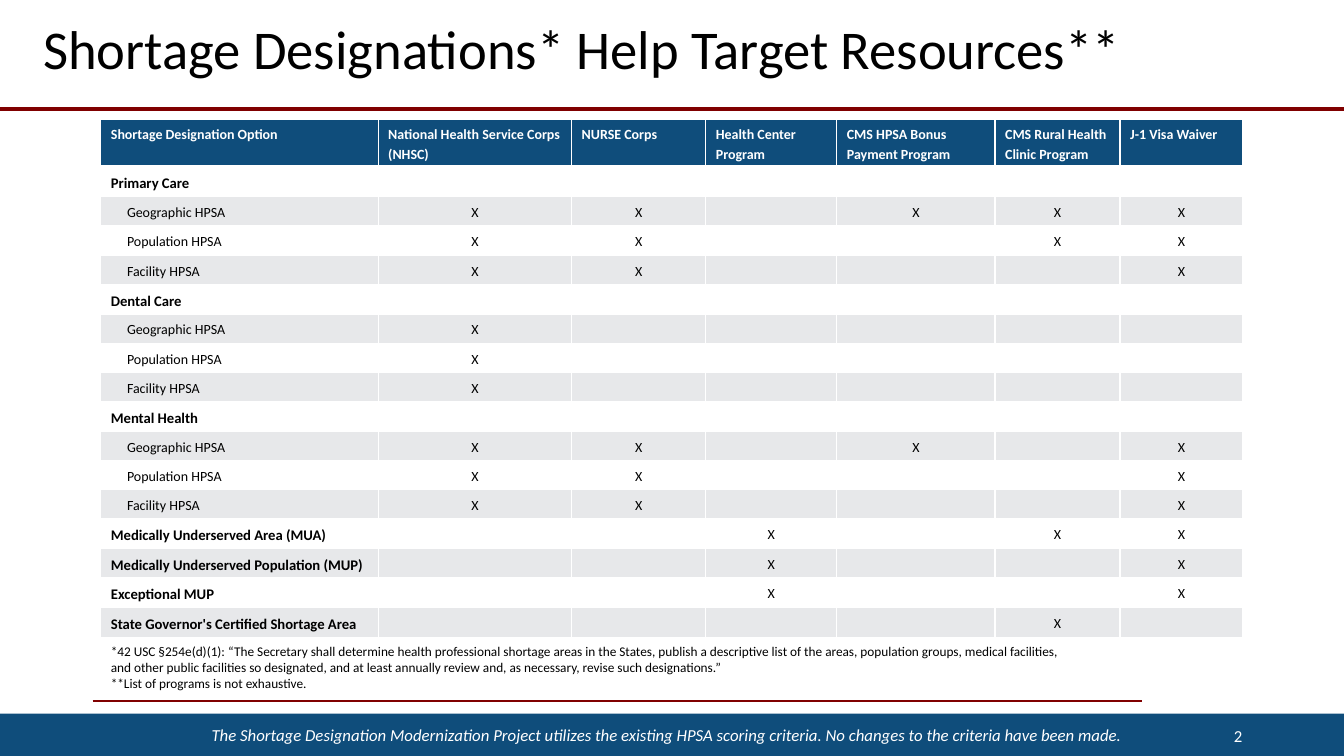
from typing import NamedTuple

from lxml import etree
from pptx import Presentation
from pptx.dml.color import RGBColor
from pptx.enum.shapes import MSO_CONNECTOR, MSO_SHAPE
from pptx.enum.text import MSO_ANCHOR, PP_ALIGN
from pptx.oxml.ns import qn
from pptx.util import Inches, Pt

RECT = MSO_SHAPE.RECTANGLE
LINE = MSO_CONNECTOR.STRAIGHT
TOP, MIDDLE = MSO_ANCHOR.TOP, MSO_ANCHOR.MIDDLE
LEFT, CENTER, RIGHT = PP_ALIGN.LEFT, PP_ALIGN.CENTER, PP_ALIGN.RIGHT

FONT = "Calibri"
NAVY, MAROON, GREY = "0F4D7B", "800000", "E7E8EA"
WHITE, BLACK = "FFFFFF", "000000"


class Rule(NamedTuple):
    left: float
    right: float
    top: float
    width: float


class Note(NamedTuple):
    left: float
    top: float
    width: float
    height: float
    lines: list[str]
    size: float
    color: str = BLACK
    italic: bool = False
    align: PP_ALIGN = LEFT
    anchor: MSO_ANCHOR = TOP
    space: float = 1.0


class Row(NamedTuple):
    label: str
    marks: str = ""
    bold: bool = True


RULES = [Rule(0.92, 11.33, 6.95, 1.5), Rule(0, 13.33, 1.08, 3)]

NOTES = [
    Note(1, 6.33, 9.75, 0.58, [
        "*42 USC §254e(d)(1): “The Secretary shall determine health professional "
        "shortage areas in the States, publish a descriptive list of the areas, "
        "population groups, medical facilities, and other public facilities so "
        "designated, and at least annually review and, as necessary, revise such "
        "designations.”",
        "**List of programs is not exhaustive.",
    ], 9.5),
    Note(0.33, 0.17, 11.83, 0.71,
         ["Shortage Designations* Help Target Resources**"],
         39, space=0.9),
    Note(2, 7.14, 9.33, 0.57, [
        "The Shortage Designation Modernization Project utilizes the existing HPSA "
        "scoring criteria. No changes to the criteria have been made.",
    ], 12, WHITE, italic=True),
    Note(9.42, 7.1, 3, 0.4, ["2"], 12, WHITE, align=RIGHT, anchor=MIDDLE),
]

HEADS = [
    "Shortage Designation Option", "National Health Service Corps (NHSC)",
    "NURSE Corps", "Health Center Program", "CMS HPSA Bonus Payment Program",
    "CMS Rural Health Clinic Program", "J-1 Visa Waiver",
]
WIDTHS = [2.75, 1.92, 1.33, 1.3, 1.57, 1.24, 1.22]
HEAD_H, ROW_H = 0.48, 0.29


def group(name: str, geo: str, pop: str, site: str) -> list[Row]:
    kinds = zip(("Geographic", "Population", "Facility"), (geo, pop, site))
    return [Row(name)] + [Row(f"{kind} HPSA", marks, False) for kind, marks in kinds]


ROWS = [
    *group("Primary Care", "XX-XXX", "XX--XX", "XX---X"),
    *group("Dental Care", "X", "X", "X"),
    *group("Mental Health", "XX-X-X", "XX---X", "XX---X"),
    Row("Medically Underserved Area (MUA)", "--X-XX"),
    Row("Medically Underserved Population (MUP)", "--X--X"),
    Row("Exceptional MUP", "--X--X"),
    Row("State Governor's Certified Shortage Area", "----X-"),
]


def rgb(code: str) -> RGBColor:
    return RGBColor.from_string(code)


def write(para, text: str, size: float, color: str, bold=False, italic=False) -> None:
    run = para.add_run()
    run.text = text
    font = run.font
    font.name, font.size = FONT, Pt(size)
    font.bold, font.italic = bold, italic
    font.color.rgb = rgb(color)


def draw_rule(slide, rule: Rule) -> None:
    line = slide.shapes.add_connector(
        LINE, Inches(rule.left), Inches(rule.top), Inches(rule.right), Inches(rule.top))
    line.line.color.rgb = rgb(MAROON)
    line.line.width = Pt(rule.width)
    etree.SubElement(line._element.spPr, qn("a:effectLst"))


def draw_note(slide, note: Note) -> None:
    box = slide.shapes.add_textbox(*map(Inches, note[:4]))
    frame = box.text_frame
    frame.word_wrap = True
    frame.vertical_anchor = note.anchor
    for i, text in enumerate(note.lines):
        para = frame.add_paragraph() if i else frame.paragraphs[0]
        para.alignment = note.align
        para.line_spacing = note.space
        write(para, text, note.size, note.color, italic=note.italic)


def style(cell, fill: str, base: float) -> None:
    props = cell._tc.get_or_add_tcPr()
    for side, width in (("L", 1), ("R", 1), ("T", 1), ("B", base)):
        edge = etree.SubElement(props, qn(f"a:ln{side}"), w=str(Pt(width)))
        paint = etree.SubElement(edge, qn("a:solidFill"))
        etree.SubElement(paint, qn("a:srgbClr"), val=WHITE)
    cell.fill.solid()
    cell.fill.fore_color.rgb = rgb(fill)
    cell.margin_bottom = Inches(0.04)


def fill_cell(cell, text: str, size: float, color: str, bold: bool,
              align: PP_ALIGN) -> None:
    para = cell.text_frame.paragraphs[0]
    para.alignment = align
    para.line_spacing = 1.15
    if text:
        para.space_after = Pt(10)
        write(para, text, size, color, bold)
    else:
        etree.SubElement(para._p, qn("a:endParaRPr"), sz=str(int(size * 100)))


def draw_table(slide) -> None:
    height = HEAD_H + ROW_H * len(ROWS)
    table = slide.shapes.add_table(
        len(ROWS) + 1, len(HEADS), Inches(1), Inches(1.18),
        Inches(sum(WIDTHS)), Inches(height)).table
    for col, width in zip(table.columns, WIDTHS):
        col.width = Inches(width)
    for i, line in enumerate(table.rows):
        line.height = Inches(ROW_H if i else HEAD_H)
    for j, head in enumerate(HEADS):
        cell = table.cell(0, j)
        style(cell, NAVY, 3)
        fill_cell(cell, head, 10, WHITE, True, LEFT)
    for i, row in enumerate(ROWS, 1):
        marks = row.marks.ljust(len(HEADS) - 1, "-")
        for j, text in enumerate([row.label, *marks.replace("-", " ")]):
            cell = table.cell(i, j)
            style(cell, WHITE if i % 2 else GREY, 1)
            bold = row.bold and j == 0
            fill_cell(cell, text.strip(), 10.5 if bold else 10, BLACK, bold,
                      CENTER if j else LEFT)
        if not row.bold:
            table.cell(i, 0).margin_left = Inches(0.26)


def main() -> None:
    deck = Presentation()
    deck.slide_width, deck.slide_height = Inches(13.33), Inches(7.5)
    slide = deck.slides.add_slide(deck.slide_layouts[6])
    band = slide.shapes.add_shape(RECT, 0, Inches(7.08), Inches(13.33), Inches(0.42))
    band.shadow.inherit = False
    band.fill.solid()
    band.fill.fore_color.rgb = rgb(NAVY)
    band.line.fill.background()
    for rule in RULES:
        draw_rule(slide, rule)
    draw_table(slide)
    for note in NOTES:
        draw_note(slide, note)
    deck.save("out.pptx")


if __name__ == "__main__":
    main()
